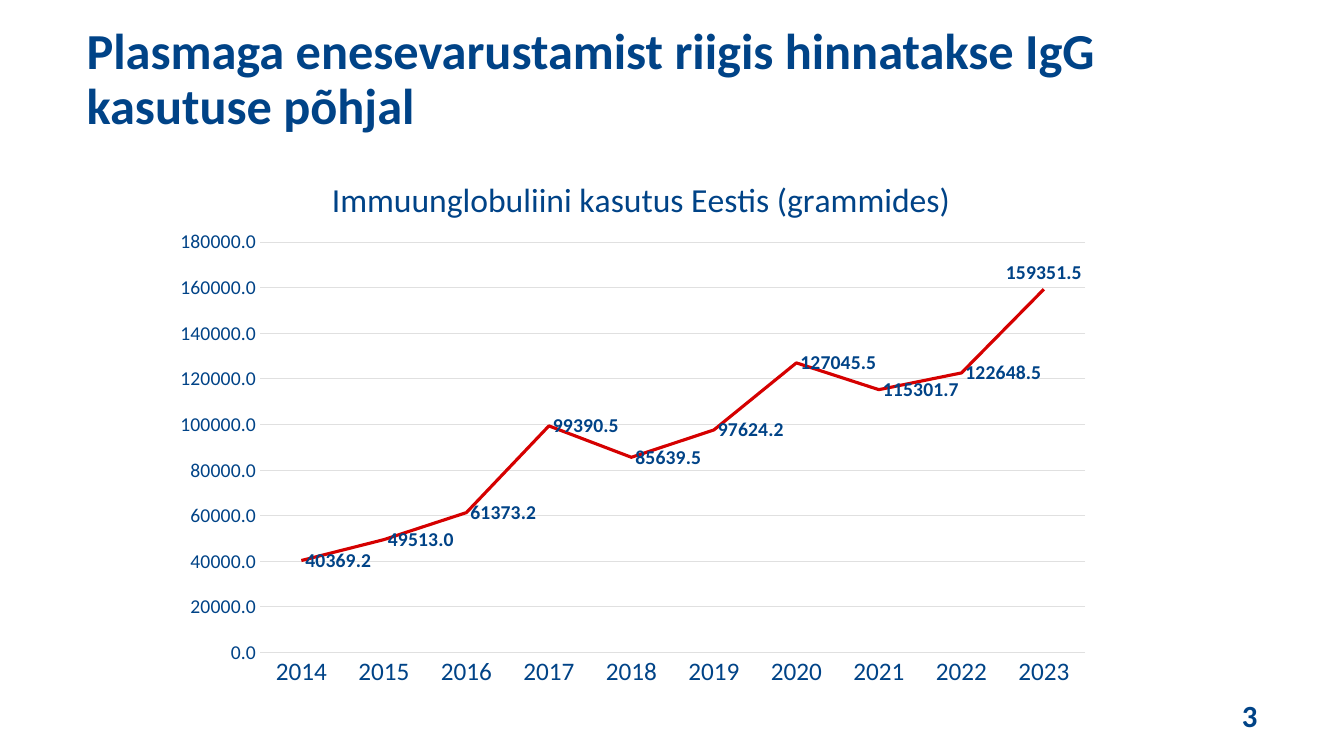
from lxml import etree
from pptx import Presentation
from pptx.chart.data import CategoryChartData
from pptx.dml.color import RGBColor
from pptx.enum.chart import XL_CHART_TYPE, XL_LABEL_POSITION, XL_MARKER_STYLE, XL_TICK_MARK
from pptx.enum.text import MSO_ANCHOR, PP_ALIGN
from pptx.oxml.ns import qn
from pptx.util import Inches, Pt

LINE = XL_CHART_TYPE.LINE
ABOVE, BESIDE = XL_LABEL_POSITION.ABOVE, XL_LABEL_POSITION.RIGHT
NO_MARK, NO_TICK = XL_MARKER_STYLE.NONE, XL_TICK_MARK.NONE
TOP, BOTTOM = MSO_ANCHOR.TOP, MSO_ANCHOR.BOTTOM
LEFT, RIGHT = PP_ALIGN.LEFT, PP_ALIGN.RIGHT
NAVY = RGBColor(0x00, 0x43, 0x87)
RED = RGBColor(0xD5, 0x00, 0x00)
GREY = RGBColor(0xE0, 0xE0, 0xE0)
FACE = "Calibri"


def style(font, size, bold=False):
    font.name = FACE
    font.size = Pt(size)
    font.bold = bold
    font.color.rgb = NAVY


def arrange(parent, index, **values):
    for old in parent.findall(qn("c:layout")):
        parent.remove(old)
    layout = etree.Element(qn("c:layout"))
    manual = etree.SubElement(layout, qn("c:manualLayout"))
    for name, value in values.items():
        etree.SubElement(manual, qn("c:" + name)).set("val", str(value))
    parent.insert(index, layout)


deck = Presentation()
deck.slide_width = Inches(13.33)
deck.slide_height = Inches(7.5)
slide = deck.slides.add_slide(deck.slide_layouts[6])

texts = [
    ("Plasmaga enesevarustamist riigis hinnatakse IgG kasutuse põhjal",
     0.76, 0.59, 11.82, 0.8, 36, LEFT, BOTTOM),
    ("3", 11.71, 6.9, 0.86, 0.39, 22, RIGHT, TOP),
]
for text, x, y, w, h, size, align, anchor in texts:
    box = slide.shapes.add_textbox(Inches(x), Inches(y), Inches(w), Inches(h))
    frame = box.text_frame
    frame.word_wrap = True
    frame.vertical_anchor = anchor
    frame.text = text
    para = frame.paragraphs[0]
    para.alignment = align
    para.line_spacing = 0.9
    style(para.runs[0].font, size, True)

data = CategoryChartData(number_format="0.0")
data.categories = [str(year) for year in range(2014, 2024)]
data.add_series("Series 1", [40369.2, 49513, 61373.2, 99390.5, 85639.5,
                             97624.2, 127045.5, 115301.7, 122648.5, 159351.5])
chart = slide.shapes.add_chart(
    LINE, Inches(1.65), Inches(1.48), Inches(9.3), Inches(5.43), data).chart
style(chart.font, 10)
chart.has_legend = False
chart.has_title = True
title = chart.chart_title
title.text_frame.text = "Immuunglobuliini kasutus Eestis (grammides)"
style(title.text_frame.paragraphs[0].runs[0].font, 24)
title.include_in_layout = False

for axis, size in ((chart.category_axis, 18), (chart.value_axis, 14)):
    axis.major_tick_mark = NO_TICK
    axis.minor_tick_mark = NO_TICK
    style(axis.tick_labels.font, size)

years, grams = chart.category_axis, chart.value_axis
years.format.line.color.rgb = GREY
years.format.line.width = Pt(0.75)
grams.minimum_scale = 0
grams.maximum_scale = 180000
grams.major_unit = 20000
grams.format.line.fill.background()
grams.major_gridlines.format.line.color.rgb = GREY
grams.major_gridlines.format.line.width = Pt(0.75)
grams.tick_labels.number_format = "0.0"
grams.tick_labels.number_format_is_linked = False

plot = chart.plots[0]
plot.vary_by_categories = False
series = plot.series[0]
series.smooth = False
series.marker.style = NO_MARK
series.format.line.color.rgb = RED
series.format.line.width = Pt(2.25)
labels = series.data_labels
labels.show_value = True
labels.number_format = "0.0"
labels.number_format_is_linked = False
labels.position = BESIDE
style(labels.font, 14, True)
last = series.points[9].data_label
style(last.font, 14, True)
last.position = ABOVE

root = chart.element
arrange(root.xpath("c:chart/c:title")[0], 1,
        xMode="edge", yMode="edge", x=0.17, y=0.04)
arrange(root.xpath("c:chart/c:plotArea")[0], 0, layoutTarget="inner",
        xMode="edge", yMode="edge", x=0.1, y=0.17, w=0.88, h=0.75)

deck.save("out.pptx")
